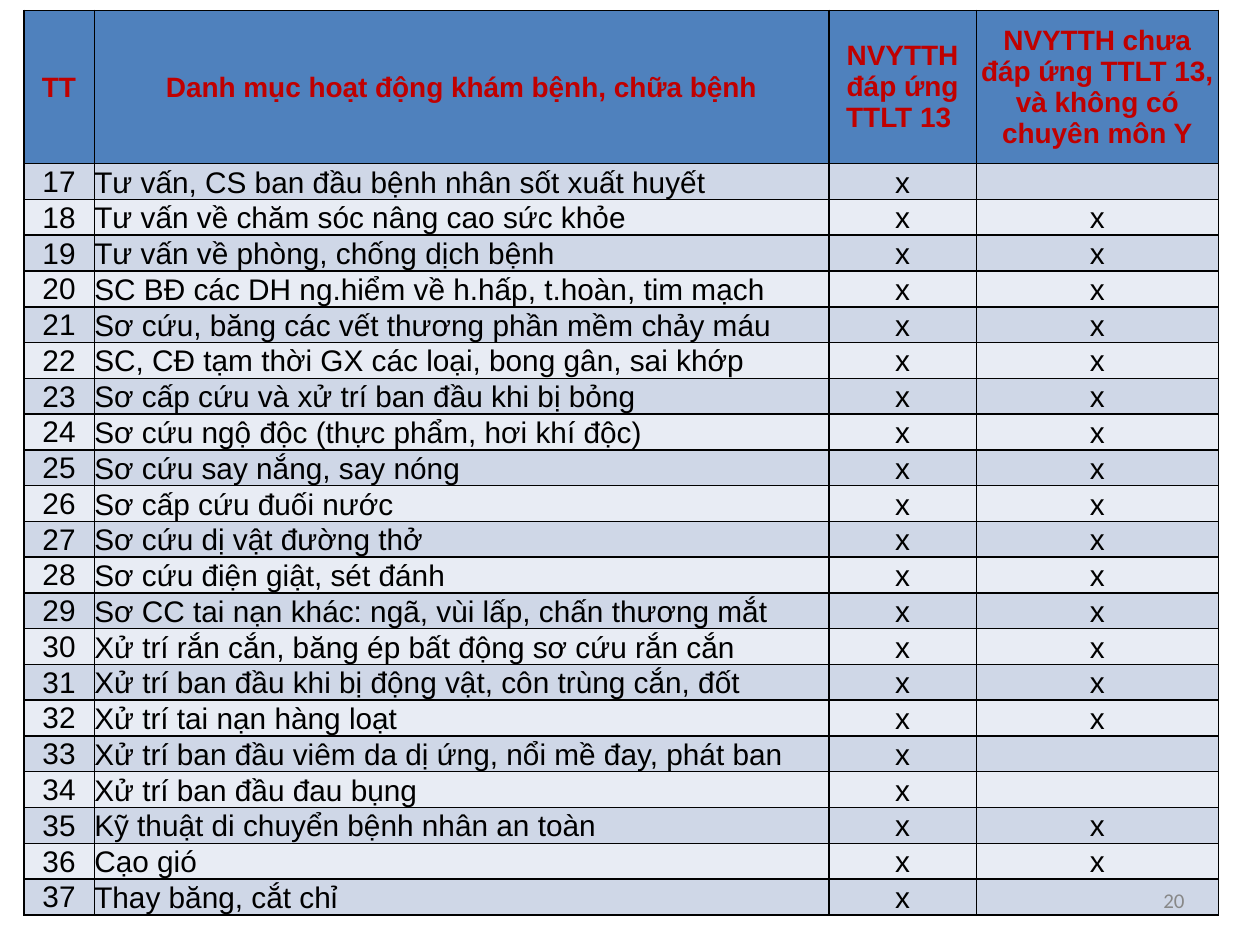
"""Build the slide listing health-care activities 17 to 37 by staff group."""
from lxml import etree
from pptx import Presentation
from pptx import util as u
from pptx.dml.color import RGBColor
from pptx.enum import text
from pptx.oxml import ns

HEADERS = [
    "TT",
    "Danh mục hoạt động khám bệnh, chữa bệnh",
    "NVYTTH đáp ứng TTLT 13 ",
    "NVYTTH chưa đáp ứng TTLT 13, và không có chuyên môn Y",
]
FIRST_NUMBER = 17
ACTIVITIES = [
    "Tư vấn, CS ban đầu bệnh nhân sốt xuất huyết",
    "Tư vấn về chăm sóc nâng cao sức khỏe",
    "Tư vấn về phòng, chống dịch bệnh",
    "SC BĐ các DH ng.hiểm về h.hấp, t.hoàn, tim mạch",
    "Sơ cứu, băng các vết thương phần mềm chảy máu",
    "SC, CĐ tạm thời GX các loại, bong gân, sai khớp",
    "Sơ cấp cứu và xử trí ban đầu khi bị bỏng",
    "Sơ cứu ngộ độc (thực phẩm, hơi khí độc)",
    "Sơ cứu say nắng, say nóng",
    "Sơ cấp cứu đuối nước",
    "Sơ cứu dị vật đường thở",
    "Sơ cứu điện giật, sét đánh",
    "Sơ CC tai nạn khác: ngã, vùi lấp, chấn thương mắt",
    "Xử trí rắn cắn, băng ép bất động sơ cứu rắn cắn",
    "Xử trí ban đầu khi bị động vật, côn trùng cắn, đốt",
    "Xử trí tai nạn hàng loạt",
    "Xử trí ban đầu viêm da dị ứng, nổi mề đay, phát ban",
    "Xử trí ban đầu đau bụng",
    "Kỹ thuật di chuyển bệnh nhân an toàn",
    "Cạo gió",
    "Thay băng, cắt chỉ",
]
QUALIFIED_ONLY = {17, 33, 34, 37}
PAGE_NUMBER = "20"

COLUMN_WIDTHS = [1.42, 14.81, 2.97, 4.88]
HEADER_HEIGHT, ROW_HEIGHT = 3.09, 0.72
TABLE_LEFT, TABLE_TOP = 0.48, 0.21
THEME = {
    "font": "Arial",
    "page_font": "Calibri",
    "header_size": 16,
    "body_size": 17,
    "page_size": 12,
    "header_fill": "4F81BD",
    "bands": ["CFD7E7", "E8ECF4"],
    "header_text": "C00000",
    "body_text": "000000",
    "page_text": "888888",
    "border": "000000",
}


def style_paragraph(paragraph, font, size, color, alignment, bold=False):
    """Set the type and alignment of one paragraph."""
    paragraph.alignment = alignment
    paragraph.font.name = font
    paragraph.font.size = u.Pt(size)
    paragraph.font.bold = bold
    paragraph.font.color.rgb = RGBColor.from_string(color)


def add_borders(cell):
    """Draw a thin line on the four sides of a cell."""
    properties = cell._tc.get_or_add_tcPr()
    for index, side in enumerate(("lnL", "lnR", "lnT", "lnB")):
        line = etree.Element(ns.qn(f"a:{side}"), w=str(u.Pt(1)))
        fill = etree.SubElement(line, ns.qn("a:solidFill"))
        etree.SubElement(fill, ns.qn("a:srgbClr"), val=THEME["border"])
        properties.insert(index, line)


def fill_cell(cell, wording, row, column):
    """Write one cell and style it by its row and column."""
    header = row == 0
    number = column == 0 and not header
    cell.text = wording
    cell.vertical_anchor = text.MSO_ANCHOR.MIDDLE
    cell.margin_left = cell.margin_right = cell.margin_top = u.Cm(0.02 if number else 0)
    cell.margin_bottom = u.Cm(0)
    cell.fill.solid()
    fill = THEME["header_fill"] if header else THEME["bands"][(row - 1) % 2]
    cell.fill.fore_color.rgb = RGBColor.from_string(fill)
    paragraph = cell.text_frame.paragraphs[0]
    left = column == 1 and not header
    kind = "header" if header else "body"
    style_paragraph(paragraph, THEME["font"], THEME[f"{kind}_size"], THEME[f"{kind}_text"],
                    text.PP_ALIGN.LEFT if left else text.PP_ALIGN.CENTER, header)
    if wording and not number and not (header and column > 1):
        paragraph.line_spacing = 1.07
    add_borders(cell)


def add_activity_table(slide):
    """Add the table of activities."""
    rows = [HEADERS]
    for number, activity in enumerate(ACTIVITIES, FIRST_NUMBER):
        rows.append([str(number), activity, "x", "" if number in QUALIFIED_ONLY else "x"])
    heights = [HEADER_HEIGHT] + [ROW_HEIGHT] * len(ACTIVITIES)
    table = slide.shapes.add_table(
        len(rows), len(HEADERS), u.Cm(TABLE_LEFT), u.Cm(TABLE_TOP),
        u.Cm(sum(COLUMN_WIDTHS)), u.Cm(sum(heights))).table
    for column, width in zip(table.columns, COLUMN_WIDTHS):
        column.width = u.Cm(width)
    for row, (wordings, height) in enumerate(zip(rows, heights)):
        table.rows[row].height = u.Cm(height)
        for column, wording in enumerate(wordings):
            fill_cell(table.cell(row, column), wording, row, column)


def add_page_number(slide):
    """Add the page number at the lower right."""
    frame = slide.shapes.add_textbox(u.Cm(18.2), u.Cm(17.65), u.Cm(5.93), u.Cm(1.01)).text_frame
    frame.word_wrap = True
    frame.vertical_anchor = text.MSO_ANCHOR.MIDDLE
    frame.text = PAGE_NUMBER
    style_paragraph(frame.paragraphs[0], THEME["page_font"], THEME["page_size"],
                    THEME["page_text"], text.PP_ALIGN.RIGHT)


def main():
    """Build and save the presentation."""
    presentation = Presentation()
    presentation.slide_width, presentation.slide_height = u.Cm(25.4), u.Cm(19.05)
    slide = presentation.slides.add_slide(presentation.slide_layouts[6])
    add_activity_table(slide)
    add_page_number(slide)
    presentation.save("out.pptx")


if __name__ == "__main__":
    main()
